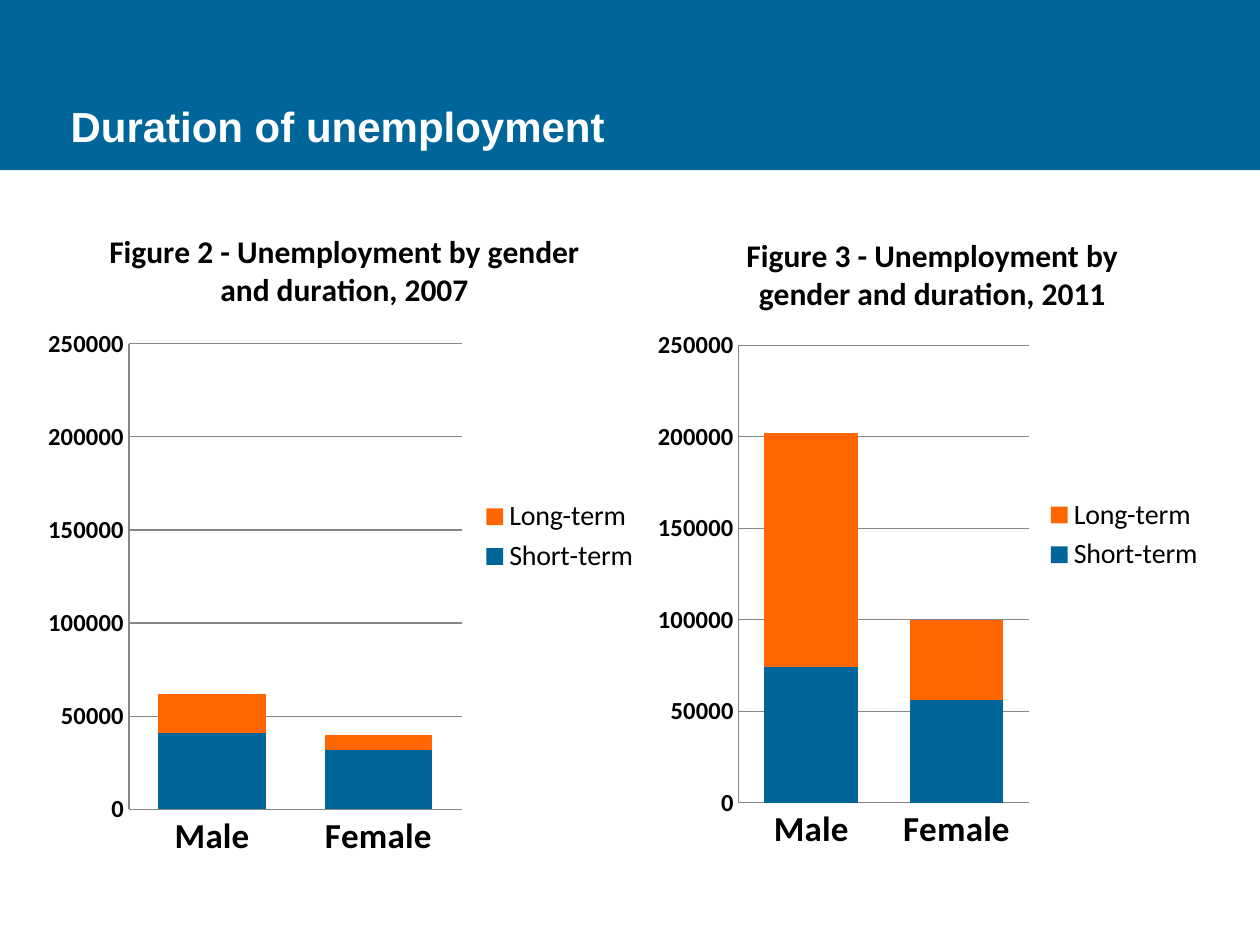
from dataclasses import dataclass

from lxml.etree import SubElement
from pptx import Presentation
from pptx.chart.data import CategoryChartData
from pptx.dml.color import RGBColor
from pptx.enum.chart import XL_CHART_TYPE, XL_LEGEND_POSITION, XL_TICK_MARK
from pptx.enum.shapes import MSO_SHAPE
from pptx.enum.text import MSO_ANCHOR, PP_ALIGN
from pptx.oxml.ns import qn
from pptx.util import Pt

HUES = {"blue": "006699", "orange": "FF6600", "white": "FFFFFF",
        "black": "000000", "grey": "868686"}
SERIES = {"Short-term": "blue", "Long-term": "orange"}


@dataclass
class Figure:
    title: str
    box: tuple[float, float, float, float]
    plot: tuple[float, float, float, float]  # shares of the chart area
    short: tuple[int, int]
    long: tuple[int, int]


FIGURES = [
    Figure("Figure 2 - Unemployment by gender and duration, 2007",
           (20.9, 116.6, 352, 380.2), (0.15, 0.21, 0.54, 0.7),
           (41000, 32000), (21000, 8000)),
    Figure("Figure 3 - Unemployment by gender and duration, 2011",
           (370.1, 118.8, 325.4, 373.7), (0.16, 0.21, 0.51, 0.7),
           (74000, 56000), (128000, 44000)),
]


def rgb(hue: str) -> RGBColor:
    return RGBColor.from_string(HUES[hue])


def style(font, size: float, bold: bool = False, hue: str = "black",
          name: str = "Calibri") -> None:
    for key, value in {"size": Pt(size), "bold": bold, "name": name}.items():
        setattr(font, key, value)
    font.color.rgb = rgb(hue)


def paint(shape, hue: str) -> None:
    shape.fill.solid()
    shape.fill.fore_color.rgb = rgb(hue)
    shape.line.fill.background()


def place_plot(chart, shares: tuple[float, ...]) -> None:
    area = chart.element.find(".//" + qn("c:plotArea"))
    for old in area.findall(qn("c:layout")):
        area.remove(old)
    layout = SubElement(area, qn("c:layout"))
    area.insert(0, layout)
    manual = SubElement(layout, qn("c:manualLayout"))
    rules = {"layoutTarget": "inner", "xMode": "edge", "yMode": "edge"}
    rules |= zip("xywh", shares)
    for tag, value in rules.items():
        SubElement(manual, qn("c:" + tag)).set("val", str(value))


def draw_chart(slide, fig: Figure) -> None:
    data = CategoryChartData()
    data.categories = ["Male", "Female"]
    for name, values in zip(SERIES, (fig.short, fig.long)):
        data.add_series(name, values)
    chart = slide.shapes.add_chart(XL_CHART_TYPE.COLUMN_STACKED,
                                   *map(Pt, fig.box), data).chart
    style(chart.font, 10)

    # Title and legend
    chart.has_title = True
    frame = chart.chart_title.text_frame
    frame.text = fig.title
    style(frame.paragraphs[0].runs[0].font, 18, True)
    chart.chart_title.include_in_layout = False
    chart.has_legend = True
    chart.legend.position = XL_LEGEND_POSITION.RIGHT
    chart.legend.include_in_layout = False
    style(chart.legend.font, 16)

    # Columns
    plot = chart.plots[0]
    for key, value in {"gap_width": 55, "overlap": 100,
                       "vary_by_categories": False}.items():
        setattr(plot, key, value)
    for series, hue in zip(plot.series, SERIES.values()):
        paint(series.format, hue)

    # Axes
    for axis, size in ((chart.category_axis, 20), (chart.value_axis, 14)):
        axis.major_tick_mark = axis.minor_tick_mark = XL_TICK_MARK.NONE
        style(axis.tick_labels.font, size, True)
        axis.format.line.color.rgb = rgb("grey")
        axis.format.line.width = Pt(0.75)
    scale = chart.value_axis
    for key, value in {"minimum_scale": 0, "maximum_scale": 250000,
                       "major_unit": 50000, "has_major_gridlines": True}.items():
        setattr(scale, key, value)
    grid = scale.major_gridlines.format.line
    grid.color.rgb = rgb("grey")
    grid.width = Pt(0.75)
    place_plot(chart, fig.plot)


def draw_head(slide, text: str) -> None:
    title = slide.shapes.title
    box = {"left": 33.1, "top": 0, "width": 393.1, "height": 90}
    for key, value in box.items():
        setattr(title, key, Pt(value))
    paint(title, "blue")
    frame = title.text_frame
    frame.text = text
    frame.word_wrap = True
    frame.vertical_anchor = MSO_ANCHOR.BOTTOM
    line = frame.paragraphs[0]
    line.alignment = PP_ALIGN.LEFT
    style(line.runs[0].font, 24, True, "white", "Arial")

    # Band behind the title
    band = slide.shapes.add_shape(MSO_SHAPE.RECTANGLE, 0, 0, Pt(720), Pt(97.2))
    band.shadow.inherit = False
    paint(band, "blue")
    title.element.addprevious(band.element)


def main() -> None:
    deck = Presentation()
    deck.slide_width, deck.slide_height = Pt(720), Pt(540)
    slide = deck.slides.add_slide(deck.slide_layouts[5])
    draw_head(slide, "Duration of unemployment")
    for fig in FIGURES:
        draw_chart(slide, fig)
    deck.save("out.pptx")


if __name__ == "__main__":
    main()
